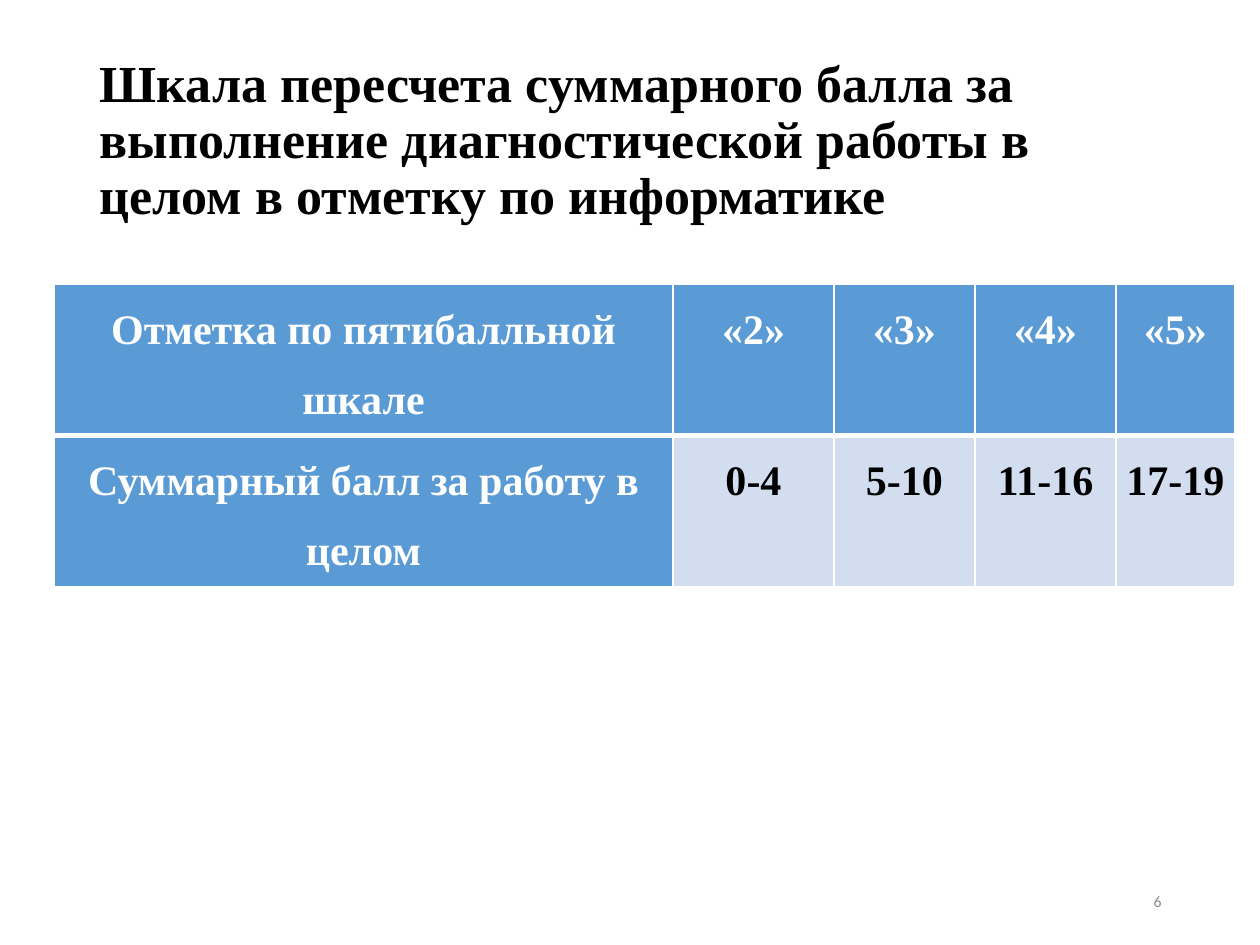
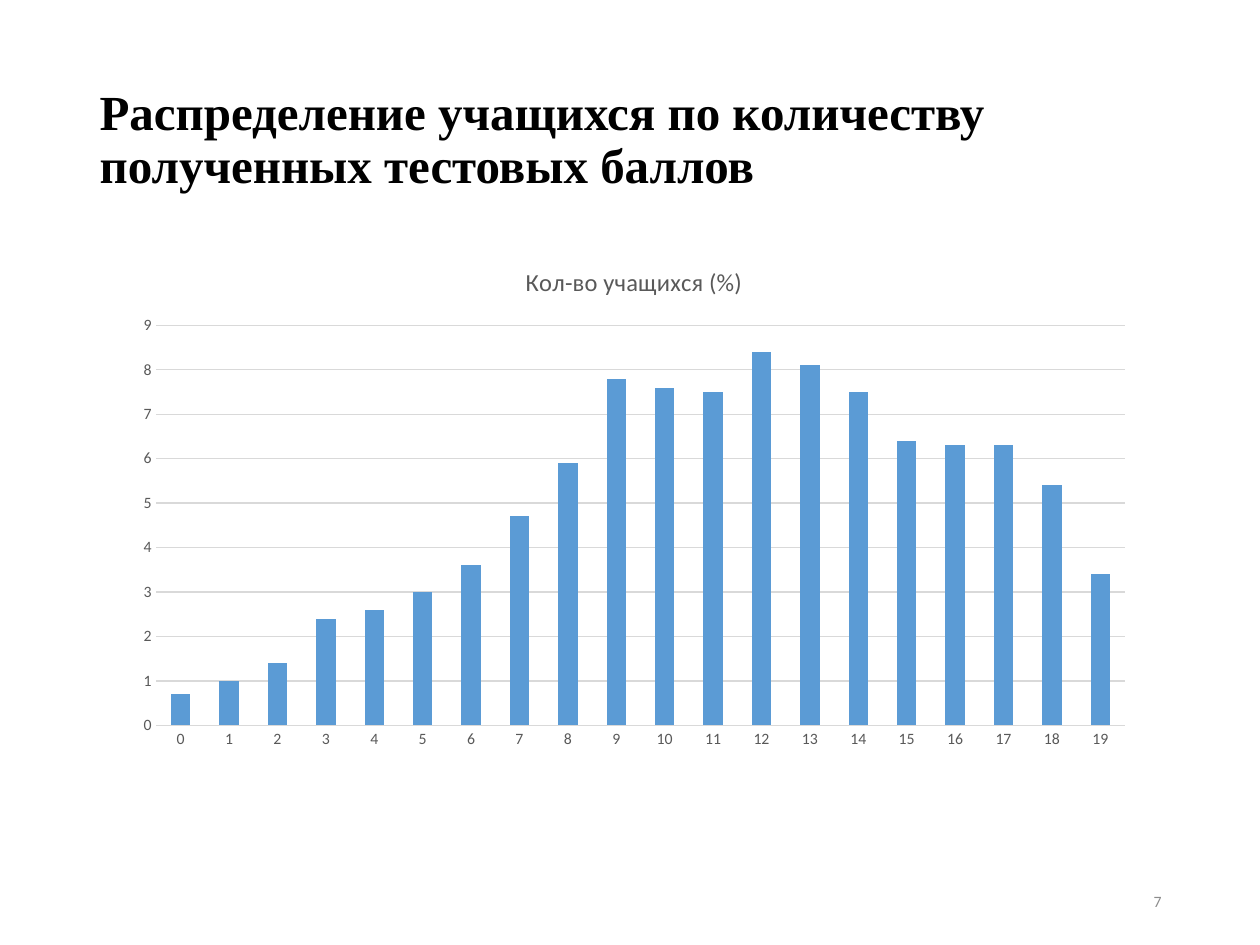
from typing import Any, NamedTuple

from lxml.etree import SubElement
from pptx import Presentation
from pptx.chart.data import CategoryChartData
from pptx.dml.color import RGBColor
from pptx.enum.chart import XL_CHART_TYPE, XL_TICK_MARK
from pptx.enum.text import MSO_ANCHOR, MSO_AUTO_SIZE, PP_ALIGN
from pptx.oxml.ns import qn
from pptx.util import Pt

EMU_PER_PX = 914400 / 126
SERIF = "Times New Roman"
SANS = "Calibri"
COLORS = {
    "black": "000000",
    "white": "FFFFFF",
    "blue": "5B9BD5",
    "pale": "D2DEEF",
    "axis": "595959",
    "grid": "D9D9D9",
    "number": "8C8C8C",
}


class Box(NamedTuple):
    left: int
    top: int
    width: int
    height: int


class Heading(NamedTuple):
    text: str
    size: float
    number: int


TITLE_BOX = Box(87, 50, 1086, 183)
NUMBER_BOX = Box(890, 876, 284, 50)
SCALE_BOX = Box(54, 284, 1181, 298)
CHART_BOX = Box(123, 244, 1022, 515)

SCALE_HEADING = Heading(
    "Шкала пересчета суммарного балла за выполнение диагностической работы "
    "в целом в отметку по информатике", 29.7, 6)
SCORES_HEADING = Heading(
    "Распределение учащихся по количеству полученных тестовых баллов", 28, 7)

SCALE_WIDTHS = [619, 161, 141, 141, 119]
SCALE_ROWS = [
    ["Отметка по пятибалльной шкале", "«2»", "«3»", "«4»", "«5»"],
    ["Суммарный балл за работу в целом", "0-4", "5-10", "11-16", "17-19"],
]

SERIES_NAME = "Кол-во учащихся (%)"
STUDENT_SHARES = [0.7, 1, 1.4, 2.4, 2.6, 3, 3.6, 4.7, 5.9, 7.8,
                  7.6, 7.5, 8.4, 8.1, 7.5, 6.4, 6.3, 6.3, 5.4, 3.4]


def px(length: int) -> int:
    return round(length * EMU_PER_PX)


def emu(box: Box) -> list[int]:
    return [px(length) for length in box]


def rgb(color: str) -> RGBColor:
    return RGBColor.from_string(COLORS[color])


def apply(target: Any, **values: Any) -> None:
    for attribute, value in values.items():
        setattr(target, attribute, value)


def style_font(font: Any, name: str, size: float, color: str, bold: bool = False) -> None:
    apply(font, name=name, size=Pt(size), bold=bold)
    font.color.rgb = rgb(color)


def start_slide(deck: Any, heading: Heading) -> Any:
    slide = deck.slides.add_slide(deck.slide_layouts.get_by_name("Title Only"))
    title = slide.shapes.title
    apply(title, **dict(zip(Box._fields, emu(TITLE_BOX))))
    apply(title.text_frame, text=heading.text, word_wrap=True,
          auto_size=MSO_AUTO_SIZE.NONE, vertical_anchor=MSO_ANCHOR.MIDDLE)
    paragraph = title.text_frame.paragraphs[0]
    apply(paragraph, alignment=PP_ALIGN.LEFT, line_spacing=0.9)
    style_font(paragraph.runs[0].font, SERIF, heading.size, "black", True)

    number = slide.shapes.add_textbox(*emu(NUMBER_BOX)).text_frame
    apply(number, text=str(heading.number), word_wrap=True,
          vertical_anchor=MSO_ANCHOR.MIDDLE)
    number.paragraphs[0].alignment = PP_ALIGN.RIGHT
    style_font(number.paragraphs[0].runs[0].font, SANS, 9, "number")
    return slide


def add_borders(cell: Any, widths: dict[str, int]) -> None:
    properties = cell._tc.get_or_add_tcPr()
    for side, width in widths.items():
        line = SubElement(properties, qn(f"a:ln{side}"), w=str(Pt(width)))
        fill = SubElement(line, qn("a:solidFill"))
        SubElement(fill, qn("a:srgbClr"), val=COLORS["white"])


def fill_cell(cell: Any, text: str, is_header: bool, borders: dict[str, int]) -> None:
    add_borders(cell, borders)
    apply(cell, text=text, margin_left=px(9), margin_right=px(9),
          margin_top=0, margin_bottom=0, vertical_anchor=MSO_ANCHOR.TOP)
    cell.fill.solid()
    cell.fill.fore_color.rgb = rgb("blue" if is_header else "pale")
    paragraph = cell.text_frame.paragraphs[0]
    apply(paragraph, alignment=PP_ALIGN.CENTER, line_spacing=1.5)
    style_font(paragraph.runs[0].font, SERIF, 24, "white" if is_header else "black", True)


def add_scale_table(slide: Any) -> None:
    table = slide.shapes.add_table(
        len(SCALE_ROWS), len(SCALE_WIDTHS), *emu(SCALE_BOX)).table
    apply(table, first_col=True, horz_banding=False)
    for column, width in zip(table.columns, SCALE_WIDTHS):
        column.width = px(width)
    for row, texts in enumerate(SCALE_ROWS):
        borders = {"L": 1, "R": 1, "T": 3 if row else 1, "B": 1 if row else 3}
        for column, text in enumerate(texts):
            fill_cell(table.cell(row, column), text, row == 0 or column == 0, borders)


def style_axis(axis: Any) -> None:
    apply(axis, major_tick_mark=XL_TICK_MARK.NONE, minor_tick_mark=XL_TICK_MARK.NONE)
    axis.format.line.fill.background()
    style_font(axis.tick_labels.font, SANS, 9, "axis")


def add_scores_chart(slide: Any) -> None:
    data = CategoryChartData()
    data.categories = [str(score) for score in range(len(STUDENT_SHARES))]
    data.add_series(SERIES_NAME, STUDENT_SHARES)
    chart = slide.shapes.add_chart(
        XL_CHART_TYPE.COLUMN_CLUSTERED, *emu(CHART_BOX), data).chart
    style_font(chart.font, SANS, 10, "black")
    apply(chart, has_legend=False, has_title=True)

    caption = chart.chart_title
    caption.include_in_layout = False
    caption.text_frame.text = SERIES_NAME
    style_font(caption.text_frame.paragraphs[0].runs[0].font, SANS, 14, "axis")

    for axis in (chart.category_axis, chart.value_axis):
        style_axis(axis)
    apply(chart.value_axis, minimum_scale=0, maximum_scale=9, major_unit=1,
          has_major_gridlines=True)
    gridline = chart.value_axis.major_gridlines.format.line
    gridline.width = Pt(0.75)
    gridline.color.rgb = rgb("grid")

    plot = chart.plots[0]
    apply(plot, gap_width=150, vary_by_categories=False)
    columns = plot.series[0].format.fill
    columns.solid()
    columns.fore_color.rgb = rgb("blue")


def main() -> None:
    deck = Presentation()
    apply(deck, slide_width=px(1260), slide_height=px(945))
    add_scale_table(start_slide(deck, SCALE_HEADING))
    add_scores_chart(start_slide(deck, SCORES_HEADING))
    deck.save("out.pptx")


if __name__ == "__main__":
    main()
